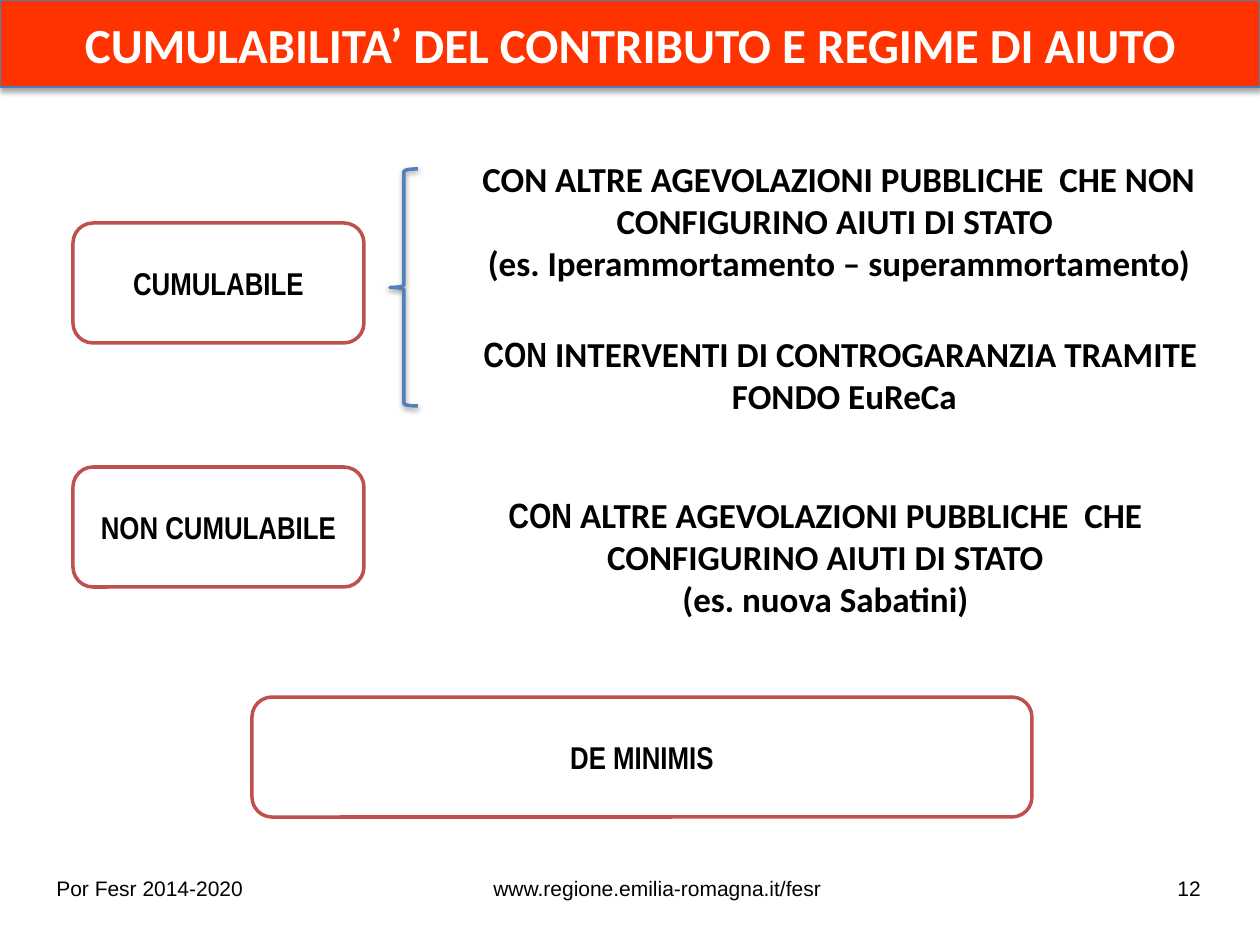
from dataclasses import dataclass

from lxml import etree
from pptx import Presentation
from pptx import util as u
from pptx.dml.color import RGBColor
from pptx.enum import shapes, text
from pptx.oxml import ns

EMU_PER_PX = 914400 / 126


def px(value):
    return u.Emu(round(value * EMU_PER_PX))


@dataclass(frozen=True)
class Theme:
    red: str = "FF3300"
    title_edge: str = "4B7EBC"
    blue: str = "4F81BD"
    box_edge: str = "C0504D"
    white: str = "FFFFFF"
    black: str = "000000"
    body_font: str = "Calibri"
    label_font: str = "Arial Narrow"
    footer_font: str = "Arial"
    title_size: int = 28
    body_size: int = 20
    label_size: int = 18
    footer_size: int = 12


class SlideBuilder:
    def __init__(self, presentation, theme):
        self.theme = theme
        self.slide = presentation.slides.add_slide(presentation.slide_layouts[5])

    def place(self, shape, box):
        for name, value in zip(("left", "top", "width", "height"), box):
            setattr(shape, name, px(value))

    def paint(self, shape, fill, line, width):
        if fill:
            shape.fill.solid()
            shape.fill.fore_color.rgb = RGBColor.from_string(fill)
        else:
            shape.fill.background()
        shape.line.color.rgb = RGBColor.from_string(line)
        shape.line.width = u.Pt(width)

    def drop_shadow(self, shape, distance, opacity):
        """Give the shape a soft black shadow straight below it."""
        shape.shadow.inherit = False
        effects = shape._element.spPr.find(ns.qn("a:effectLst"))
        shadow = etree.SubElement(
            effects, ns.qn("a:outerShdw"), blurRad=str(u.Pt(3.1)),
            dist=str(u.Pt(distance)), dir="5400000", rotWithShape="0")
        color = etree.SubElement(shadow, ns.qn("a:srgbClr"), val=self.theme.black)
        etree.SubElement(color, ns.qn("a:alpha"), val=str(opacity * 1000))

    def set_text(self, shape, paragraphs, size, color, bold=True, wrap=True,
                 align=text.PP_ALIGN.CENTER, anchor=text.MSO_ANCHOR.MIDDLE):
        """Fill the shape with paragraphs, each a list of (words, font name)."""
        frame = shape.text_frame
        formats = {"word_wrap": wrap, "vertical_anchor": anchor,
                   "auto_size": text.MSO_AUTO_SIZE.NONE}
        for name, value in formats.items():
            setattr(frame, name, value)
        for index, runs in enumerate(paragraphs):
            paragraph = frame.add_paragraph() if index else frame.paragraphs[0]
            paragraph.alignment = align
            for words, font_name in runs:
                run = paragraph.add_run()
                run.text = words
                for name, value in {"name": font_name, "size": u.Pt(size),
                                    "bold": bold}.items():
                    setattr(run.font, name, value)
                run.font.color.rgb = RGBColor.from_string(color)

    def title(self, words, box):
        theme, shape = self.theme, self.slide.shapes.title
        self.place(shape, box)
        self.paint(shape, theme.red, theme.title_edge, 0.75)
        self.drop_shadow(shape, 1.8, 35)
        self.set_text(shape, [[(words, theme.body_font)]], theme.title_size, theme.white)

    def label_box(self, words, box):
        theme = self.theme
        shape = self.slide.shapes.add_shape(
            shapes.MSO_SHAPE.FLOWCHART_ALTERNATE_PROCESS, *map(px, box))
        shape.shadow.inherit = False
        self.paint(shape, theme.white, theme.box_edge, 2)
        self.set_text(shape, [[(words, theme.label_font)]], theme.label_size, theme.black)

    def brace(self, box):
        shape = self.slide.shapes.add_shape(shapes.MSO_SHAPE.LEFT_BRACE, *map(px, box))
        self.paint(shape, None, self.theme.blue, 2)
        self.drop_shadow(shape, 1.6, 38)

    def body(self, paragraphs, box):
        shape = self.slide.shapes.add_textbox(*map(px, box))
        self.set_text(shape, paragraphs, self.theme.body_size, self.theme.black,
                      anchor=text.MSO_ANCHOR.TOP)

    def footer(self, words, box):
        theme = self.theme
        shape = self.slide.shapes.add_textbox(*map(px, box))
        self.set_text(shape, [[(words, theme.footer_font)]], theme.footer_size,
                      theme.black, bold=False, wrap=False, align=text.PP_ALIGN.LEFT,
                      anchor=text.MSO_ANCHOR.TOP)


def main():
    presentation = Presentation()
    presentation.slide_width, presentation.slide_height = px(1260), px(945)
    theme = Theme()
    builder = SlideBuilder(presentation, theme)
    calibri, narrow = theme.body_font, theme.label_font

    builder.title("CUMULABILITA’ DEL CONTRIBUTO E REGIME DI AIUTO", (0, 0, 1260, 87))

    for words, left, top, width in (("CUMULABILE", 73, 223, 291),
                                    ("NON CUMULABILE", 73, 467, 291),
                                    ("DE MINIMIS", 252, 697, 780)):
        builder.label_box(words, (left, top, width, 120))
    builder.brace((390, 169, 28, 237))

    body_left = 418
    for top, width, height, paragraphs in (
        (151, 842, 140, [
            [("CON ALTRE AGEVOLAZIONI PUBBLICHE  CHE NON CONFIGURINO AIUTI DI STATO ",
              calibri)],
            [("(es. Iperammortamento – superammortamento)", calibri)]]),
        (326, 853, 97, [
            [("CON", narrow), (" INTERVENTI DI CONTROGARANZIA TRAMITE ", calibri)],
            [("FONDO EuReCa", calibri)]]),
        (487, 815, 140, [
            [("CON", narrow),
             (" ALTRE AGEVOLAZIONI PUBBLICHE  CHE CONFIGURINO AIUTI DI STATO", calibri)],
            [("(es. nuova Sabatini)", calibri)]]),
    ):
        builder.body(paragraphs, (body_left, top, width, height))

    for words, left, width in (("Por Fesr 2014-2020", 44, 214),
                               ("www.regione.emilia-romagna.it/fesr", 481, 357),
                               ("12", 1165, 57)):
        builder.footer(words, (left, 869, width, 38))

    presentation.save("out.pptx")


if __name__ == "__main__":
    main()
